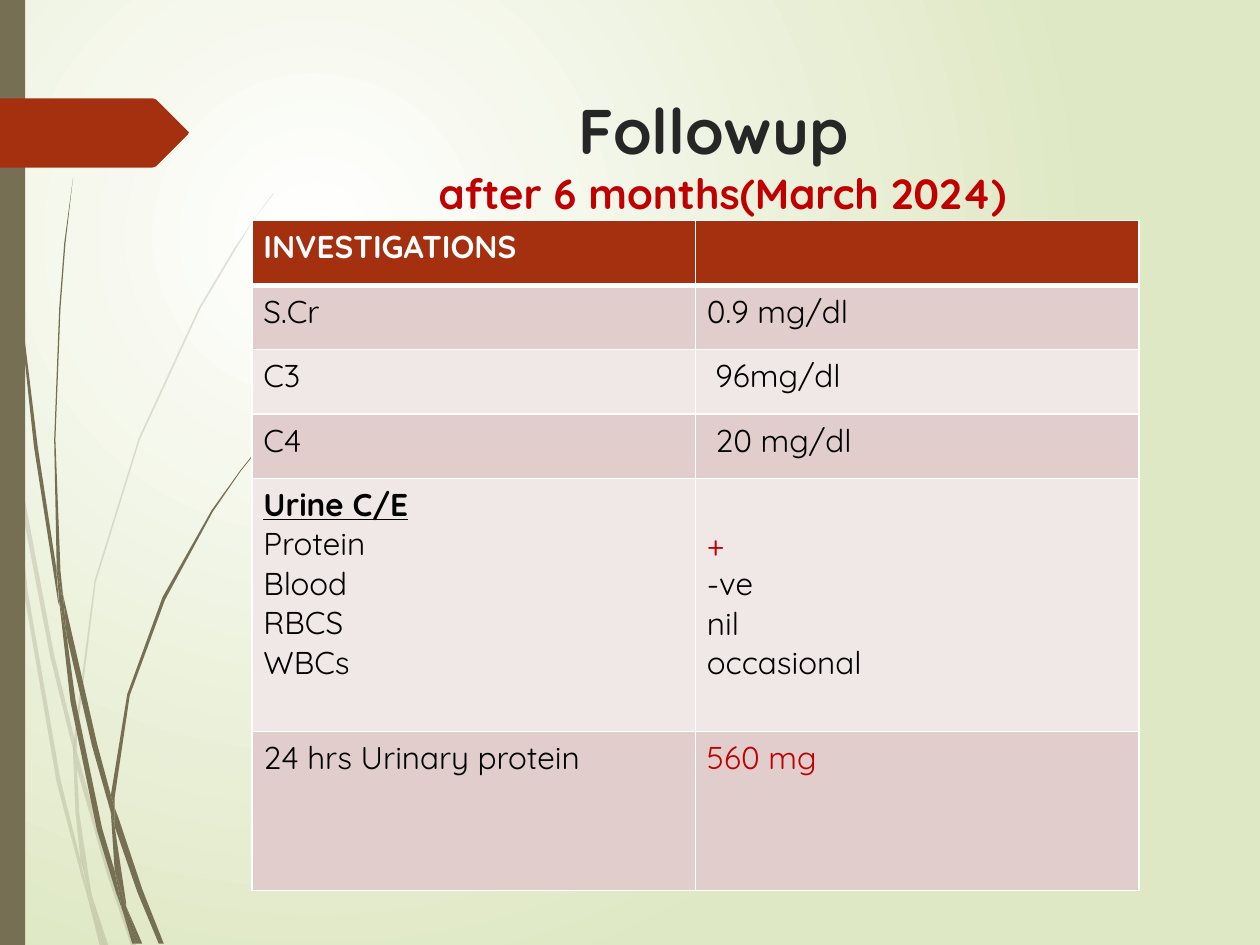
from lxml.etree import SubElement
from pptx import Presentation
from pptx.dml.color import RGBColor
from pptx.enum.shapes import MSO_SHAPE
from pptx.enum.text import MSO_ANCHOR, PP_ALIGN
from pptx.oxml.ns import qn
from pptx.util import Cm, Pt

FONT = "Quicksand"
OLIVE, RUST, RED = "766F54", "A53010", "C00000"
BLACK, WHITE = "000000", "FFFFFF"
UNIT = Cm(2.54) / 100

PALE = [
    [(8, 350), (6, 322), (0, 282), (0, 299), (7, 344)],
    [(40, 522), (59, 599), (59, 586), (43, 520), (10, 345), (12, 376)],
    [(64, 607), (61, 596), (61, 610), (85, 694), (104, 750), (108, 750),
     (88, 692)],
    [(83, 750), (86, 750), (73, 711)],
    [(64, 683), (48, 619), (22, 469), (12, 376), (8, 350), (19, 470),
     (45, 621), (64, 693), (70, 714), (69, 707)],
    [(58, 599), (60, 646), (64, 683), (67, 692), (73, 711), (72, 706),
     (63, 646), (61, 610), (61, 608)],
    [(61, 584), (76, 462), (111, 349), (159, 245), (187, 198), (201, 175),
     (217, 154), (217, 153), (201, 175), (186, 197), (158, 244), (110, 348),
     (75, 461), (59, 584), (59, 586), (61, 596)],
    [(70, 714), (79, 750), (82, 750)],
    [(61, 608), (61, 610), (61, 596), (59, 586), (58, 599)],
    [(67, 692), (65, 683), (69, 707), (70, 714), (82, 750), (83, 750),
     (73, 711)],
]
DARK = [
    [(5, 110), (14, 233), (27, 355), (46, 477), (47, 481), (45, 457),
     (45, 453), (30, 355), (15, 232), (6, 109), (4, 48), (3, 0), (2, 0),
     (3, 48)],
    [(73, 592), (88, 645), (88, 633), (88, 631), (77, 590), (50, 472),
     (53, 505)],
    [(94, 649), (91, 641), (91, 656), (109, 708), (126, 749), (130, 749),
     (113, 706)],
    [(91, 691), (81, 657), (60, 556), (53, 505), (47, 477), (56, 557),
     (77, 659), (92, 708), (97, 722), (96, 717)],
    [(50, 472), (48, 453), (44, 349), (48, 245), (52, 193), (58, 141),
     (51, 193), (47, 245), (43, 349), (45, 449), (49, 472)],
    [(110, 749), (113, 749), (100, 719)],
    [(47, 477), (53, 505), (50, 472), (49, 472), (45, 449), (45, 453)],
    [(91, 633), (103, 552), (131, 476), (169, 406), (191, 374), (203, 359),
     (216, 344), (215, 344), (203, 358), (191, 373), (168, 405), (129, 474),
     (101, 551), (88, 631), (91, 641)],
    [(97, 722), (105, 749), (108, 749)],
    [(88, 645), (91, 691), (96, 706), (100, 719), (100, 716), (91, 656),
     (90, 651)],
    [(88, 645), (90, 651), (91, 656), (91, 641), (88, 631), (88, 633)],
    [(96, 706), (91, 691), (96, 717), (97, 722), (108, 749), (110, 749),
     (100, 719)],
]
ARROW = [(149, 107), (124, 132), (121, 133), (0, 133), (0, 78), (121, 78),
         (124, 79), (149, 104), (150, 105)]
ROWS = [
    (1.3, ["INVESTIGATIONS"], []),
    (1.3, ["S.Cr"], ["0.9 mg/dl"]),
    (1.3, ["C3"], [" 96mg/dl"]),
    (1.3, ["C4"], [" 20 mg/dl"]),
    (5.1, ["Urine C/E", "Protein", "Blood", "RBCS", "WBCs"],
     ["+", "-ve", "nil", "occasional"]),
    (3.2, ["24 hrs Urinary protein"], ["560 mg"]),
]


def tint(color):
    """Turn a hex string into a colour."""
    return RGBColor.from_string(color)


def paint(item, color):
    """Give a shape or cell a solid fill."""
    item.fill.solid()
    item.fill.fore_color.rgb = tint(color)


def finish(shape, color):
    """Fill a shape and drop its line and shadow."""
    paint(shape, color)
    shape.line.fill.background()
    shape.shadow.inherit = False


def style(font, size, color, bold=False):
    """Set the look of a font."""
    font.name, font.size, font.bold = FONT, Pt(size), bold
    font.color.rgb = tint(color)


def outline(shapes, points, color):
    """Draw a closed outline through points in hundredths of an inch."""
    pen = shapes.build_freeform(*points[0], scale=UNIT)
    pen.add_line_segments(points[1:], close=True)
    shape = pen.convert_to_shape()
    finish(shape, color)
    return shape


def wisps(slide, stems, alpha=100):
    """Draw a group of grass stems."""
    group = slide.shapes.add_group_shape()
    for stem in stems:
        shape = outline(group.shapes, stem, OLIVE)
        if alpha < 100:
            node = shape.fill._xPr.find(".//" + qn("a:srgbClr"))
            SubElement(node, qn("a:alpha"), val=str(alpha * 1000))


def backdrop(slide):
    """Set a round gradient behind the slide."""
    fill = slide.background.fill
    fill.gradient()
    for stop, color in zip(fill.gradient_stops, (WHITE, "DFE8C4")):
        stop.color.rgb = tint(color)
    grad = slide.background._cSld.find(".//" + qn("a:gradFill"))
    grad.remove(grad.find(qn("a:lin")))
    ring = SubElement(grad, qn("a:path"), path="circle")
    SubElement(ring, qn("a:fillToRect"), l="50000", t="50000",
               r="100000", b="100000")


def title(slide):
    """Add the two-line heading."""
    box = slide.shapes.add_textbox(Cm(5.41), Cm(1.73), Cm(18.31), Cm(3.56))
    frame = box.text_frame
    frame.word_wrap = True
    frame.vertical_anchor = MSO_ANCHOR.TOP
    para = frame.paragraphs[0]
    para.alignment = PP_ALIGN.CENTER
    head = para.add_run()
    head.text = "Followup "
    style(head.font, 36, "262626", True)
    para.add_line_break()
    date = para.add_run()
    date.text = "after 6 months(March 2024)"
    style(date.font, 24, RED, True)


def border(cell, low):
    """Draw white cell borders, the lower one with its own width."""
    props = cell._tc.get_or_add_tcPr()
    for spot, (side, width) in enumerate(
            (("L", 1), ("R", 1), ("T", 1), ("B", low))):
        line = SubElement(props, qn(f"a:ln{side}"), w=str(Pt(width)))
        fill = SubElement(line, qn("a:solidFill"))
        SubElement(fill, qn("a:srgbClr"), val=WHITE)
        props.insert(spot, line)


def write(cell, lines, head):
    """Write lines into a cell, one paragraph each."""
    cell.margin_left = cell.margin_right = Cm(0.23)
    cell.text = "\n".join(lines)
    for para in cell.text_frame.paragraphs:
        text = para.text
        color = WHITE if head else RED if text in ("+", "560 mg") else BLACK
        label = text == "Urine C/E"
        style(para.font, 18, color, head or label)
        para.font.underline = label


def table(slide):
    """Add the table of investigations."""
    frame = slide.shapes.add_table(len(ROWS), 2, Cm(5.08), Cm(4.45),
                                   Cm(17.88), Cm(13.5))
    grid = frame.table
    for r, (height, *texts) in enumerate(ROWS):
        grid.rows[r].height = Cm(height)
        for c, lines in enumerate(texts):
            cell = grid.cell(r, c)
            write(cell, lines, r == 0)
            paint(cell, RUST if r == 0 else ("F0E8E7", "E1CDCC")[r % 2])
            border(cell, 3 if r == 0 else 1)
    grid.cell(4, 1).margin_top = Cm(0.93)


def main():
    """Build and save the slide."""
    deck = Presentation()
    deck.slide_width, deck.slide_height = Cm(25.4), Cm(19.05)
    slide = deck.slides.add_slide(deck.slide_layouts[6])
    backdrop(slide)
    wisps(slide, PALE, 20)
    wisps(slide, DARK)
    bar = slide.shapes.add_shape(MSO_SHAPE.RECTANGLE, 0, 0, Cm(0.51), Cm(19.05))
    finish(bar, OLIVE)
    outline(slide.shapes, ARROW, RUST)
    title(slide)
    table(slide)
    deck.save("out.pptx")


if __name__ == "__main__":
    main()
